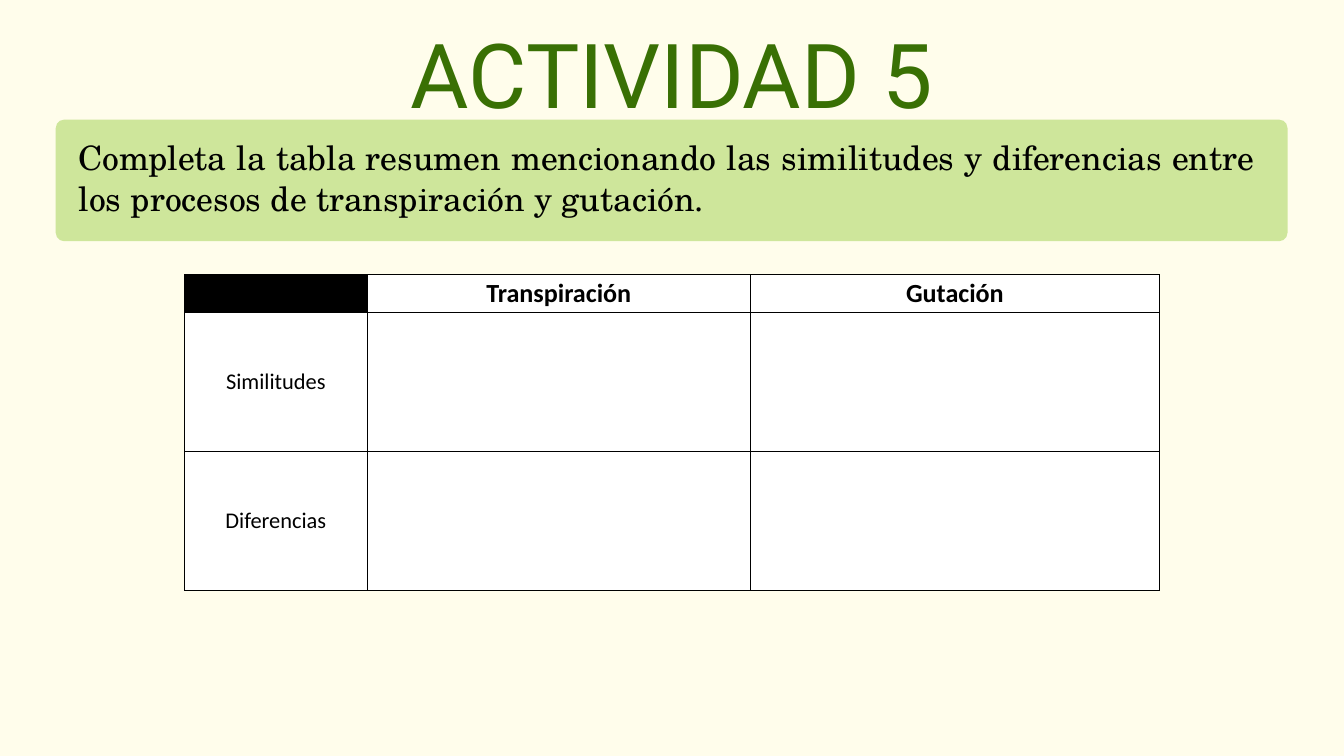
from lxml import etree
from pptx import Presentation
from pptx.dml.color import RGBColor
from pptx.enum import shapes, text
from pptx.oxml import ns
from pptx.util import Inches, Pt

CREAM = RGBColor(0xFF, 0xFD, 0xEB)
GREEN = RGBColor(0x39, 0x70, 0x04)
LIME = RGBColor(0xCE, 0xE6, 0x9B)
BLACK = RGBColor(0, 0, 0)
WHITE = RGBColor(0xFF, 0xFF, 0xFF)

ROWS = [
    ["", "Transpiración", "Gutación"],
    ["Similitudes", "", ""],
    ["Diferencias", "", ""],
]
COL_WIDTHS = [2.71, 5.71, 6.08]
ROW_HEIGHTS = [0.56, 2.07, 2.07]


def style(p, size, font, color, align, bold=False):
    """Set the font and alignment of a paragraph."""
    p.alignment = align
    p.font.size = Pt(size)
    p.font.name = font
    p.font.color.rgb = color
    p.font.bold = bold


def add_text(slide, box, words, size, font, color, align):
    """Place a wrapping text box without margins and return its paragraph."""
    tf = slide.shapes.add_textbox(*map(Inches, box)).text_frame
    tf.word_wrap = True
    tf.auto_size = text.MSO_AUTO_SIZE.SHAPE_TO_FIT_TEXT
    tf.margin_left = tf.margin_right = tf.margin_top = tf.margin_bottom = 0
    p = tf.paragraphs[0]
    p.text = words
    style(p, size, font, color, align)
    return p


def add_title(slide, box):
    """Place the activity title."""
    p = add_text(slide, box, "ACTIVIDAD 5", 96, "Roboto", GREEN, text.PP_ALIGN.CENTER)
    p.line_spacing = Pt(140)


def add_instruction(slide, box):
    """Place the rounded panel with the instruction inside it."""
    left, top, width, height = box
    sp = slide.shapes.add_shape(
        shapes.MSO_SHAPE.ROUNDED_RECTANGLE, *map(Inches, box))
    sp.adjustments[0] = 0.07
    sp.shadow.inherit = False
    sp.fill.solid()
    sp.fill.fore_color.rgb = LIME
    sp.line.fill.background()
    inner = (left + 0.34, top + 0.26, width - 0.83, height - 0.6)
    add_text(slide, inner,
             "Completa la tabla resumen mencionando las similitudes y diferencias "
             "entre los procesos de transpiración y gutación.",
             36, "TeX Gyre Schola", BLACK, text.PP_ALIGN.JUSTIFY)


def add_borders(cell):
    """Draw a thin black line on each side of a cell."""
    tc_pr = cell._tc.get_or_add_tcPr()
    for i, side in enumerate(("lnL", "lnR", "lnT", "lnB")):
        ln = etree.Element(ns.qn(f"a:{side}"), w=str(Pt(1)))
        fill = etree.SubElement(ln, ns.qn("a:solidFill"))
        etree.SubElement(fill, ns.qn("a:srgbClr"), val=str(BLACK))
        tc_pr.insert(i, ln)


def add_summary_table(slide, box):
    """Place the comparison table."""
    table = slide.shapes.add_table(
        len(ROWS), len(COL_WIDTHS), *map(Inches, box)).table
    table.horz_banding = False
    for col, width in zip(table.columns, COL_WIDTHS):
        col.width = Inches(width)
    for row, height in zip(table.rows, ROW_HEIGHTS):
        row.height = Inches(height)
    for i, words in enumerate(ROWS):
        for j, word in enumerate(words):
            cell = table.cell(i, j)
            cell.margin_top = cell.margin_bottom = Inches(0.04)
            cell.vertical_anchor = text.MSO_ANCHOR.MIDDLE
            cell.fill.solid()
            cell.fill.fore_color.rgb = BLACK if i == j == 0 else WHITE
            add_borders(cell)
            if word:
                p = cell.text_frame.paragraphs[0]
                p.text = word
                style(p, 28 if i == 0 else 24, "Calibri", BLACK,
                      text.PP_ALIGN.CENTER, bold=i == 0)


def main():
    """Build the slide and save it."""
    prs = Presentation()
    prs.slide_width, prs.slide_height = Inches(20), Inches(11.25)
    slide = prs.slides.add_slide(prs.slide_layouts[6])
    slide.background.fill.solid()
    slide.background.fill.fore_color.rgb = CREAM
    add_title(slide, (5.93, -0.06, 8.14, 1.81))
    add_instruction(slide, (0.83, 1.78, 18.33, 1.81))
    add_summary_table(slide, (2.75, 4.09, sum(COL_WIDTHS), sum(ROW_HEIGHTS)))
    prs.save("out.pptx")


if __name__ == "__main__":
    main()
